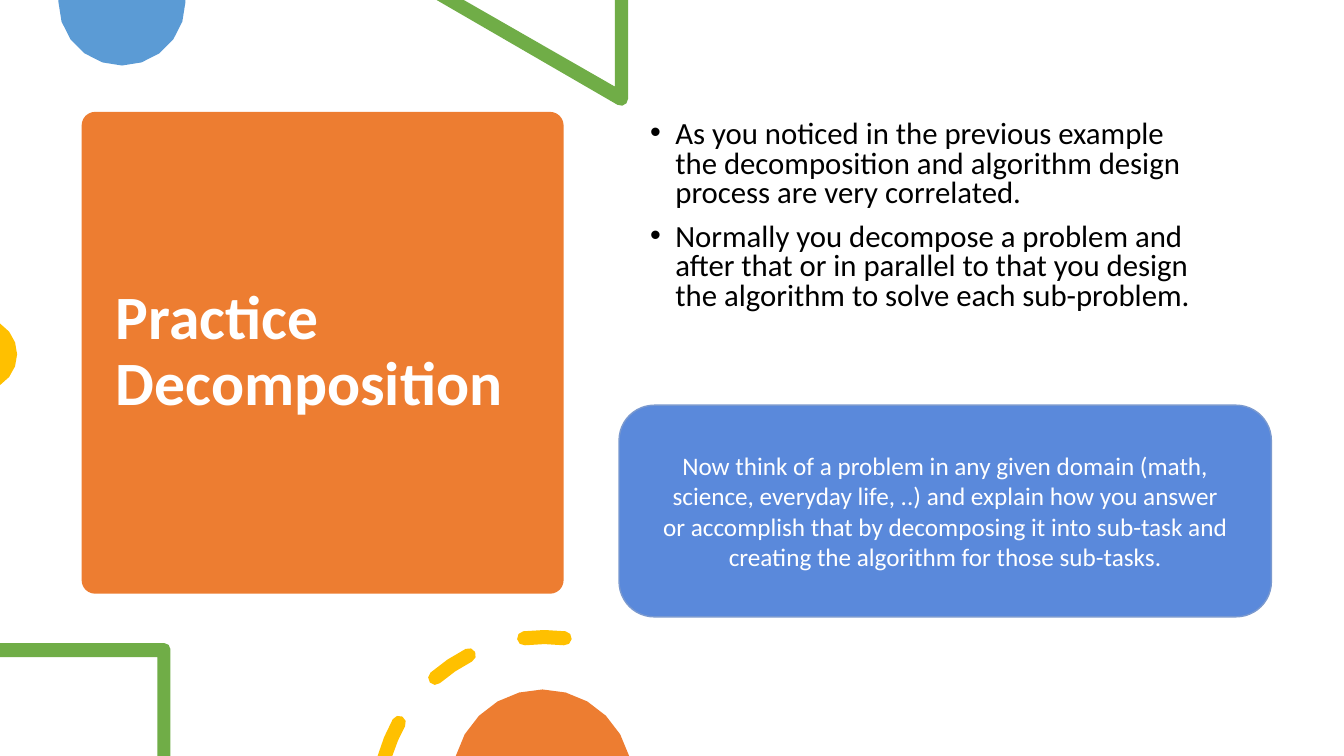
import math

import lxml.etree
import pptx
import pptx.dml.color
import pptx.enum.shapes
import pptx.enum.text
import pptx.oxml.ns
import pptx.util

PX = 9144
FONT = "Calibri"
WHITE, BLACK = "FFFFFF", "000000"
ORANGE, BLUE, GREEN, YELLOW = "ED7D31", "5B9BD5", "70AD47", "FFC000"
CALLOUT_FILL, CALLOUT_LINE = "5A89DB", "7A99CF"
BULLETS = [
    "As you noticed in the previous example the decomposition and algorithm design process are very correlated.",
    "Normally you decompose a problem and after that or in parallel to that you design the algorithm to solve each sub-problem.",
]
TASK = (
    "Now think of a problem in any given domain (math, science, everyday life, ..) and explain "
    "how you answer or accomplish that by decomposing it into sub-task and creating the "
    "algorithm for those sub-tasks."
)


def color(value):
    return pptx.dml.color.RGBColor.from_string(value)


def emu(box):
    return [length * PX for length in box]


def paint(shape, fill, line=None):
    shape.shadow.inherit = False
    shape.fill.solid()
    shape.fill.fore_color.rgb = color(fill)
    if line:
        shape.line.color.rgb = color(line)
        shape.line.width = pptx.util.Pt(1)
    else:
        shape.line.fill.background()


def write(frame, paragraphs, size, font_color, bold=False, align="LEFT", anchor="TOP",
          line_spacing=1.0, space_before=0, bullet=None, indent=0, margin=10):
    frame.word_wrap = True
    frame.margin_left = frame.margin_right = margin * PX
    frame.vertical_anchor = getattr(pptx.enum.text.MSO_ANCHOR, anchor)
    for index, text in enumerate(paragraphs):
        paragraph = frame.add_paragraph() if index else frame.paragraphs[0]
        paragraph.alignment = getattr(pptx.enum.text.PP_ALIGN, align)
        paragraph.line_spacing = line_spacing
        paragraph.space_before = pptx.util.Pt(space_before)
        run = paragraph.add_run()
        run.text = text
        run.font.name = FONT
        run.font.size = pptx.util.Pt(size)
        run.font.bold = bold
        run.font.color.rgb = color(font_color)
        if bullet:
            properties = paragraph._p.get_or_add_pPr()
            properties.set("marL", str(indent * PX))
            properties.set("indent", str(-indent * PX))
            font = lxml.etree.SubElement(properties, pptx.oxml.ns.qn("a:buFont"))
            font.set("typeface", "Arial")
            mark = lxml.etree.SubElement(properties, pptx.oxml.ns.qn("a:buChar"))
            mark.set("char", bullet)


def rounded_box(slide, box, fill, line=None):
    kind = pptx.enum.shapes.MSO_SHAPE.ROUNDED_RECTANGLE
    shape = slide.shapes.add_shape(kind, *emu(box))
    paint(shape, fill, line)
    return shape


def arc(center, radius, start, end, steps):
    angles = [math.radians(start + (end - start) * step / steps) for step in range(steps + 1)]
    return [(center[0] + radius * math.cos(angle), center[1] + radius * math.sin(angle))
            for angle in angles]


def outline(slide, box, contours, fill):
    contours = [[(round((box[0] + x) * PX), round((box[1] + y) * PX)) for x, y in contour]
                for contour in contours]
    builder = slide.shapes.build_freeform(*contours[0][0])
    for index, contour in enumerate(contours):
        if index:
            builder.move_to(*contour[0])
        builder.add_line_segments(contour[1:], close=True)
    paint(builder.convert_to_shape(), fill)


def dash(center, radius, half, start, end, floor):
    def first_angle(distance):
        return max(start, 180 + math.degrees(math.asin((center[1] - floor) / distance)))

    def cap(angle, turn):
        middle = arc(center, radius, angle, angle, 1)[0]
        return arc(middle, half, angle + turn, angle + turn + 180, 4)[1:-1]

    outer, inner = radius + half, radius - half
    contour = arc(center, outer, first_angle(outer), end, 2) + cap(end, 0)
    contour += arc(center, inner, end, first_angle(inner), 2)
    return contour + cap(start, 180) if first_angle(inner) == start else contour


def title_panel(slide, box):
    left, top, width, height = box
    rounded_box(slide, box, ORANGE).adjustments[0] = 0.028
    title = slide.shapes.add_textbox(*emu((left + 24, top + 11, width - 47, height - 22)))
    write(title.text_frame, ["Practice Decomposition"], size=44, font_color=WHITE, bold=True,
          anchor="MIDDLE", line_spacing=0.9)


def bullet_list(slide, box):
    body = slide.shapes.add_textbox(*emu(box))
    write(body.text_frame, BULLETS, size=22, font_color=BLACK, line_spacing=0.8,
          space_before=10, bullet="•", indent=25)


def task_callout(slide, box):
    shape = rounded_box(slide, box, CALLOUT_FILL, CALLOUT_LINE)
    write(shape.text_frame, [TASK], size=18, font_color=WHITE, align="CENTER",
          anchor="MIDDLE", margin=31)


def top_decoration(slide, box):
    half_disc = [(184, 0), (58, 0)] + arc((121, 2), 63, 180, 0, 10)
    outline(slide, box, [half_disc], BLUE)
    triangle = [(623, 0), (610, 0), (610, 86), (460, 0), (433, 0)]
    outline(slide, box, [triangle + arc((616, 98), 7, 120, 0, 3)], GREEN)


def left_decoration(slide, box):
    middle = box[3] / 2
    outline(slide, box, [arc((-19, middle), 36, -58, 58, 6)], YELLOW)


def bottom_decoration(slide, box):
    floor = box[3]
    frame = [(0, 18), (0, 32), (156, 32), (156, floor), (169, floor)]
    outline(slide, box, [frame + arc((163, 24), 6, 0, -90, 2)], GREEN)
    spans = [(190, 209), (229, 243), (263, 277)]
    dashes = [dash((540, 177), 165, 7, start, end, floor) for start, end in spans]
    outline(slide, box, dashes, YELLOW)
    outline(slide, box, [arc((538, 153), 89, 195, 345, 10)], ORANGE)


def main():
    presentation = pptx.Presentation()
    presentation.slide_width, presentation.slide_height = emu((1333, 750))
    slide = presentation.slides.add_slide(presentation.slide_layouts[6])
    title_panel(slide, (81, 111, 478, 478))
    top_decoration(slide, (0, 0, 1333, 110))
    left_decoration(slide, (0, 321, 17, 61))
    bullet_list(slide, (635, 115, 575, 248))
    bottom_decoration(slide, (0, 620, 1333, 130))
    task_callout(slide, (614, 402, 647, 210))
    presentation.save("out.pptx")


if __name__ == "__main__":
    main()
